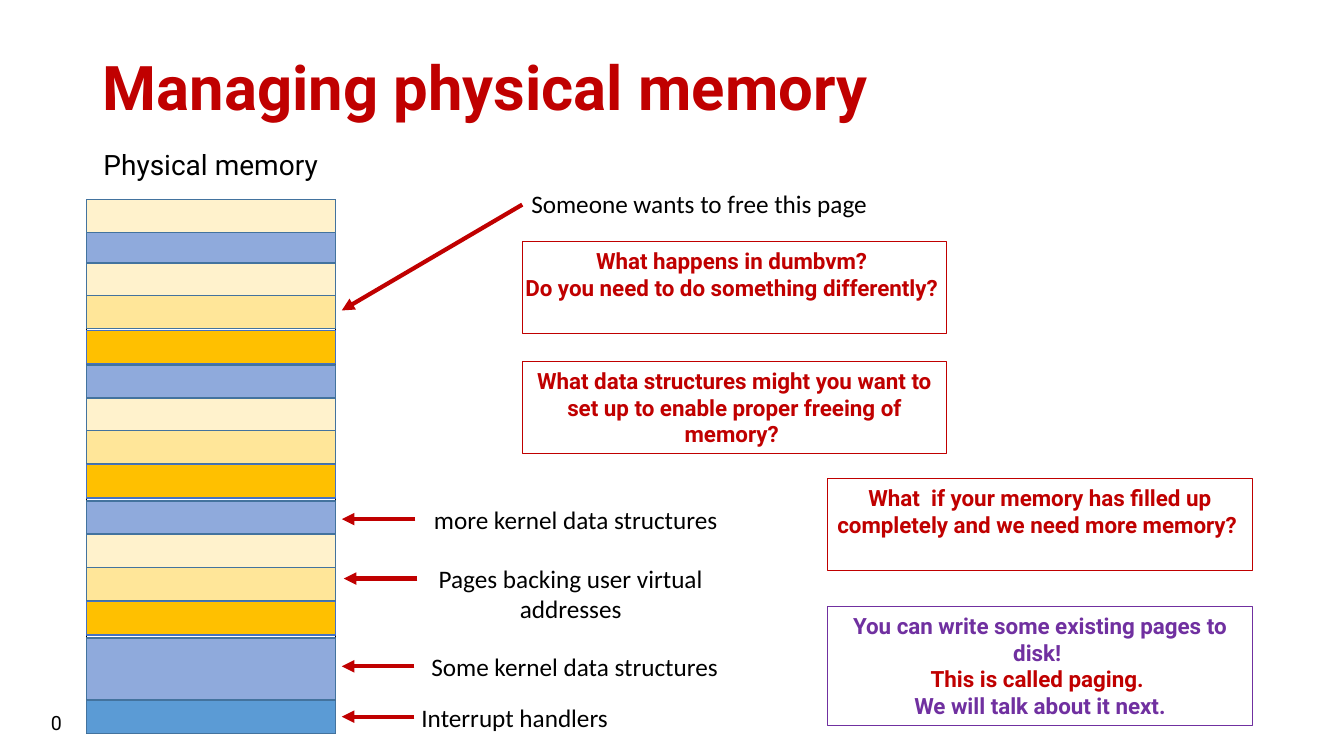
from lxml import etree
from pptx import Presentation
from pptx.dml.color import RGBColor
from pptx.enum.shapes import MSO_CONNECTOR, MSO_SHAPE
from pptx.enum.text import MSO_ANCHOR, PP_ALIGN
from pptx.oxml.ns import qn
from pptx.util import Inches, Pt

RECTANGLE = MSO_SHAPE.RECTANGLE
STRAIGHT = MSO_CONNECTOR.STRAIGHT
TOP, MIDDLE = MSO_ANCHOR.TOP, MSO_ANCHOR.MIDDLE
LEFT, CENTER = PP_ALIGN.LEFT, PP_ALIGN.CENTER
LEFT_SIDE = 1

BLACK = RGBColor(0x00, 0x00, 0x00)
RED = RGBColor(0xC0, 0x00, 0x00)
PURPLE = RGBColor(0x70, 0x30, 0xA0)
HANDLER_BLUE = RGBColor(0x5B, 0x9B, 0xD5)
KERNEL_BLUE = RGBColor(0x8F, 0xAA, 0xDC)
GOLD = RGBColor(0xFF, 0xC0, 0x00)
YELLOW = RGBColor(0xFF, 0xE6, 0x99)
CREAM = RGBColor(0xFF, 0xF2, 0xCC)
EDGE = RGBColor(0x43, 0x73, 0x9E)
GOLD_EDGE = RGBColor(0x44, 0x72, 0xC4)

MEMORY_LEFT, MEMORY_TOP = 0.86, 1.98
MEMORY_WIDTH, MEMORY_HEIGHT = 2.47, 5.3
PAGE_HEIGHT = 0.33
ARROW_TIP = 3.39

presentation = Presentation()
presentation.slide_width = Inches(13.33)
presentation.slide_height = Inches(7.5)
slide = presentation.slides.add_slide(presentation.slide_layouts[6])
shapes = slide.shapes


def add_rectangle(left, top, width, height, fill, edge, weight):
    shape = shapes.add_shape(RECTANGLE, Inches(left), Inches(top), Inches(width), Inches(height))
    shape.shadow.inherit = False
    if fill is None:
        shape.fill.background()
    else:
        shape.fill.solid()
        shape.fill.fore_color.rgb = fill
    shape.line.color.rgb = edge
    shape.line.width = Pt(weight)
    return shape


def write(shape, lines, size, font, bold=False, align=CENTER, anchor=TOP, side_inset=0.1):
    """Fill a shape with one paragraph for each (text, colour) line."""
    frame = shape.text_frame
    frame.word_wrap = True
    frame.vertical_anchor = anchor
    frame.margin_left = frame.margin_right = Inches(side_inset)
    frame.margin_top = frame.margin_bottom = Inches(0.05)
    for number, (text, colour) in enumerate(lines):
        paragraph = frame.add_paragraph() if number else frame.paragraphs[0]
        paragraph.alignment = align
        run = paragraph.add_run()
        run.text = text
        run.font.size = Pt(size)
        run.font.name = font
        run.font.bold = bold
        run.font.color.rgb = colour


# Headings and slide number
title = shapes.add_textbox(Inches(0.92), Inches(0.17), Inches(11.5), Inches(1.45))
write(title, [("Managing physical memory", RED)], 44, "Roboto", True, LEFT, MIDDLE)
title.text_frame.paragraphs[0].line_spacing = 0.9

heading = shapes.add_textbox(Inches(0.79), Inches(1.41), Inches(2.6), Inches(0.44))
write(heading, [("Physical memory", BLACK)], 20, "Roboto", side_inset=0)

slide_number = shapes.add_textbox(Inches(0.33), Inches(7), Inches(0.46), Inches(0.34))
write(slide_number, [("0", BLACK)], 14, "Roboto", side_inset=0)

# Memory column, from the lowest addresses up
add_rectangle(MEMORY_LEFT, MEMORY_TOP, MEMORY_WIDTH, MEMORY_HEIGHT, None, BLACK, 1)
segments = [(6.95, PAGE_HEIGHT, HANDLER_BLUE), (6.33, 0.61, KERNEL_BLUE)]
page_cycle = [GOLD, YELLOW, CREAM, KERNEL_BLUE]
page_tops = [5.97, 5.63, 5.3, 4.97, 4.61, 4.27, 3.94, 3.62, 3.28, 2.93, 2.6, 2.28]
for index, top in enumerate(page_tops):
    segments.append((top, PAGE_HEIGHT, page_cycle[index % len(page_cycle)]))
segments.append((MEMORY_TOP, PAGE_HEIGHT, CREAM))
for top, height, fill in segments:
    edge = GOLD_EDGE if fill == GOLD else EDGE
    add_rectangle(MEMORY_LEFT, top, MEMORY_WIDTH, height, fill, edge, 1)

# Labels: text, box, arrow start, arrow end, whether the arrow starts at the box
labels = [
    ("Interrupt handlers", (3.75, 6.92, 2.71, 0.4), (4.11, 7.11), (ARROW_TIP, 7.11), False),
    ("Some kernel data structures", (4.11, 6.41, 3.18, 0.4), (4.11, 6.61), (ARROW_TIP, 6.61), True),
    ("Pages backing user virtual addresses", (4.07, 5.54, 3.18, 0.71), (4.14, 5.74), (3.41, 5.74), False),
    ("more kernel data structures", (4.12, 4.95, 3.18, 0.4), (4.12, 5.15), (ARROW_TIP, 5.15), True),
    ("Someone wants to free this page", (4.97, 1.82, 3.93, 0.4), (5.18, 2.03), (ARROW_TIP, 3.08), False),
]
for text, box, start, end, joined in labels:
    label = shapes.add_textbox(*map(Inches, box))
    write(label, [(text, BLACK)], 18, "Calibri")
    arrow = shapes.add_connector(STRAIGHT, *map(Inches, start + end))
    if joined:
        arrow.begin_connect(label, LEFT_SIDE)
    arrow.line.color.rgb = RED
    arrow.line.width = Pt(3)
    etree.SubElement(arrow.line._get_or_add_ln(), qn("a:tailEnd"), type="triangle")
    etree.SubElement(arrow._element.spPr, qn("a:effectLst"))

# Question boxes
questions = [
    (5.18, 2.4, 0.91, RED, [
        ("What happens in dumbvm? ", RED),
        ("Do you need to do something differently? ", RED)]),
    (5.18, 3.59, 0.91, RED, [
        ("What data structures might you want to set up to enable proper freeing of memory? ", RED)]),
    (8.21, 4.75, 0.91, RED, [
        ("What  if your memory has filled up completely and we need more memory? ", RED)]),
    (8.21, 6.02, 1.18, PURPLE, [
        ("You can write some existing pages to disk! ", PURPLE),
        ("This is called paging. ", RED),
        ("We will talk about it next.", PURPLE)]),
]
for left, top, height, edge, lines in questions:
    question = add_rectangle(left, top, 4.21, height, None, edge, 0.75)
    write(question, lines, 16, "Roboto", True, side_inset=0)

presentation.save("out.pptx")
